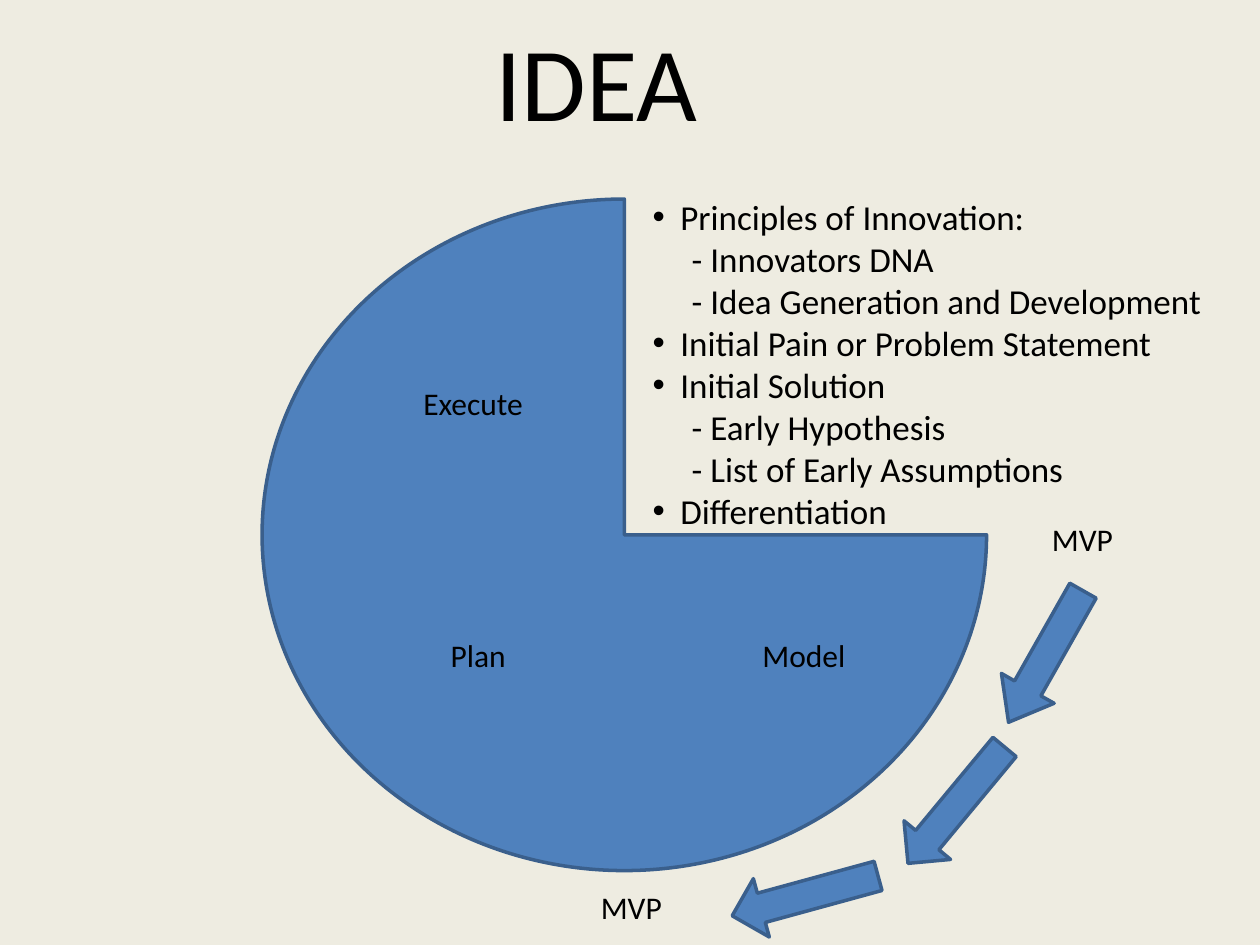
from dataclasses import dataclass

from lxml import etree
from pptx import Presentation
from pptx.dml.color import RGBColor
from pptx.enum.shapes import MSO_SHAPE
from pptx.enum.text import MSO_ANCHOR, MSO_AUTO_SIZE, PP_ALIGN
from pptx.oxml.ns import qn
from pptx.util import Inches, Pt

PIE, LEFT_ARROW = MSO_SHAPE.PIE, MSO_SHAPE.LEFT_ARROW
TOP = MSO_ANCHOR.TOP
FIT_SHAPE = MSO_AUTO_SIZE.SHAPE_TO_FIT_TEXT
LEFT, CENTER = PP_ALIGN.LEFT, PP_ALIGN.CENTER


@dataclass(frozen=True)
class Theme:
    font: str = "Calibri"
    background: RGBColor = RGBColor(0xEE, 0xEC, 0xE1)
    text: RGBColor = RGBColor(0x00, 0x00, 0x00)
    fill: RGBColor = RGBColor(0x4F, 0x81, 0xBD)
    outline: RGBColor = RGBColor(0x3A, 0x5F, 0x8C)
    outline_width: Pt = Pt(2)
    title_size: Pt = Pt(60)
    list_size: Pt = Pt(20)
    label_size: Pt = Pt(18)
    bullet_indent: float = 0.22
    sub_indent: float = 0.31


def write(paragraph, text, *, theme, size, align=LEFT):
    paragraph.alignment = align
    paragraph.space_before = Pt(0)
    run = paragraph.add_run()
    run.text = text
    run.font.name = theme.font
    run.font.size = size
    run.font.color.rgb = theme.text


class SlideBuilder:
    """Draw styled elements on the current slide."""

    def __init__(self, slide, theme):
        self.slide = slide
        self.theme = theme
        slide.background.fill.solid()
        slide.background.fill.fore_color.rgb = theme.background

    def place(self, holder, box, wrap):
        holder.left, holder.top, holder.width, holder.height = map(Inches, box)
        frame = holder.text_frame
        frame.word_wrap = wrap
        frame.auto_size = FIT_SHAPE
        frame.vertical_anchor = TOP
        return frame

    def title(self, text, box):
        frame = self.place(self.slide.shapes.title, box, False)
        write(frame.paragraphs[0], text, theme=self.theme, size=self.theme.title_size)

    def outline_list(self, topics, box):
        frame = self.place(self.slide.placeholders[1], box, True)
        rows = []
        for topic, details in topics.items():
            rows.append((topic, True))
            rows.extend((f"- {detail}", False) for detail in details)
        for index, (text, bulleted) in enumerate(rows):
            paragraph = frame.add_paragraph() if index else frame.paragraphs[0]
            write(paragraph, text, theme=self.theme, size=self.theme.list_size)
            self.indent(paragraph, bulleted)

    def indent(self, paragraph, bulleted):
        margin = Inches(self.theme.bullet_indent if bulleted else self.theme.sub_indent)
        properties = paragraph._p.get_or_add_pPr()
        properties.set("marL", str(margin))
        properties.set("indent", str(-margin if bulleted else 0))
        if bulleted:
            etree.SubElement(properties, qn("a:buFont")).set("typeface", "Arial")
            etree.SubElement(properties, qn("a:buChar")).set("char", "•")
        else:
            etree.SubElement(properties, qn("a:buNone"))

    def label(self, text, box, align=CENTER):
        holder = self.slide.shapes.add_textbox(*map(Inches, box))
        frame = self.place(holder, box, align == CENTER)
        write(frame.paragraphs[0], text, theme=self.theme,
              size=self.theme.label_size, align=align)

    def shape(self, preset, box, rotation=0, adjustments=()):
        figure = self.slide.shapes.add_shape(preset, *map(Inches, box))
        figure.shadow.inherit = False
        figure.rotation = rotation
        for index, value in enumerate(adjustments):
            figure.adjustments[index] = value
        figure.fill.solid()
        figure.fill.fore_color.rgb = self.theme.fill
        figure.line.color.rgb = self.theme.outline
        figure.line.width = self.theme.outline_width


TOPICS = {
    "Principles of Innovation:": ["Innovators DNA", "Idea Generation and Development"],
    "Initial Pain or Problem Statement": [],
    "Initial Solution": ["Early Hypothesis", "List of Early Assumptions"],
    "Differentiation": [],
}
LABEL_HEIGHT = 0.4
PHASES = [("Model", 5.67, 5, 1.42), ("Execute", 2.92, 3, 1.67), ("Plan", 3.42, 5, 0.75)]
MILESTONES = [(8.25, 4.08), (4.67, 7)]
ARROW_SIZE = (1.2, 0.48)
ARROWS = [
    (7.7, 4.97, 299.5, (0.5, 0.645)),
    (6.99, 6.15, 309.7, ()),
    (5.79, 6.87, 344.7, ()),
]


def main():
    deck = Presentation()
    deck.slide_width, deck.slide_height = Inches(10), Inches(7.5)
    builder = SlideBuilder(deck.slides.add_slide(deck.slide_layouts[1]), Theme())

    builder.shape(PIE, (2.08, 1.58, 5.75, 5.33))
    builder.title("IDEA", (3.83, 0.08, 1.83, 1.11))
    builder.outline_list(TOPICS, (5.08, 1.5, 4.58, 2.79))
    for phase, left, top, width in PHASES:
        builder.label(phase, (left, top, width, LABEL_HEIGHT))
    for left, top, rotation, adjustments in ARROWS:
        builder.shape(LEFT_ARROW, (left, top, *ARROW_SIZE), rotation, adjustments)
    for left, top in MILESTONES:
        builder.label("MVP", (left, top, 0.69, LABEL_HEIGHT), LEFT)

    deck.save("out.pptx")


if __name__ == "__main__":
    main()
